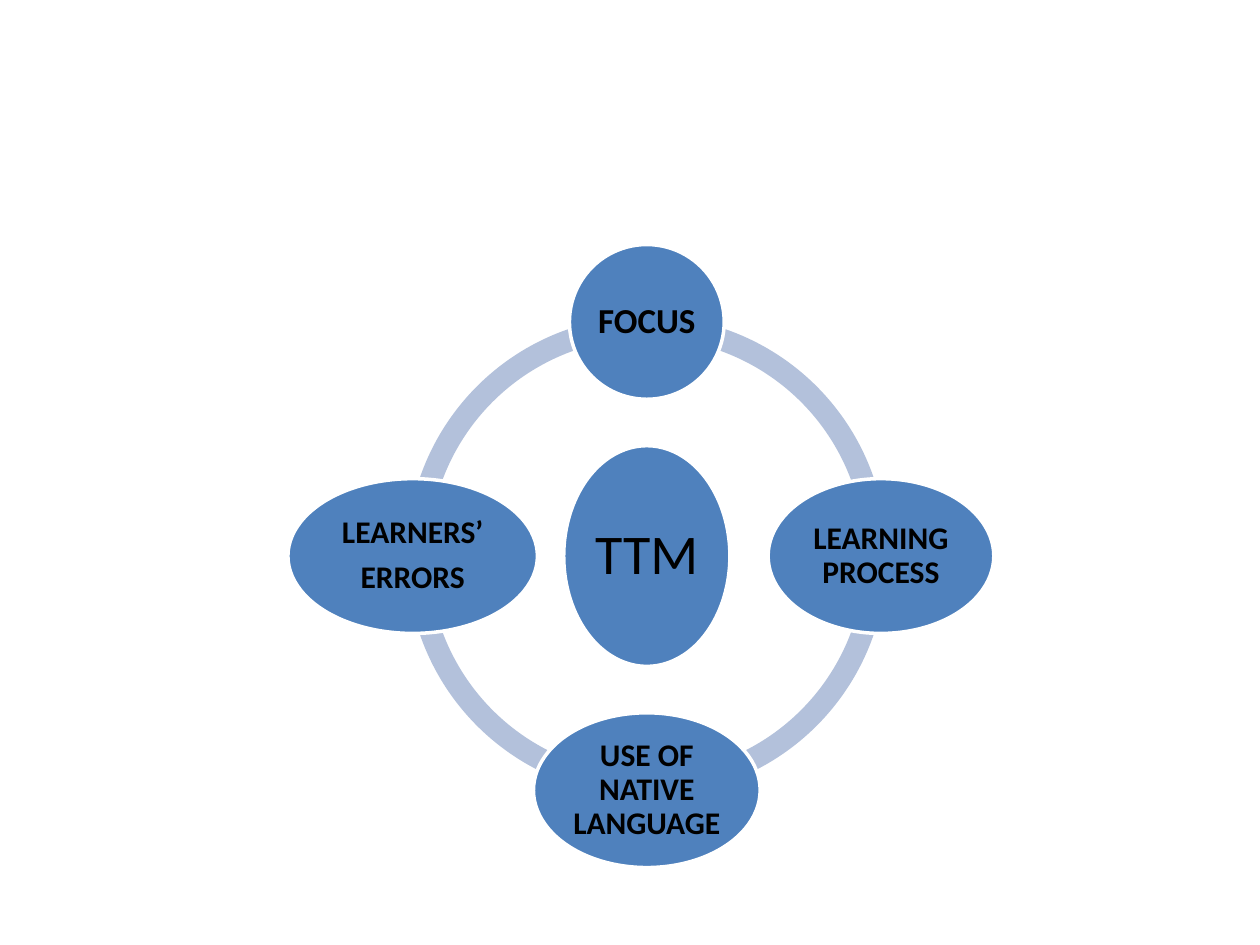
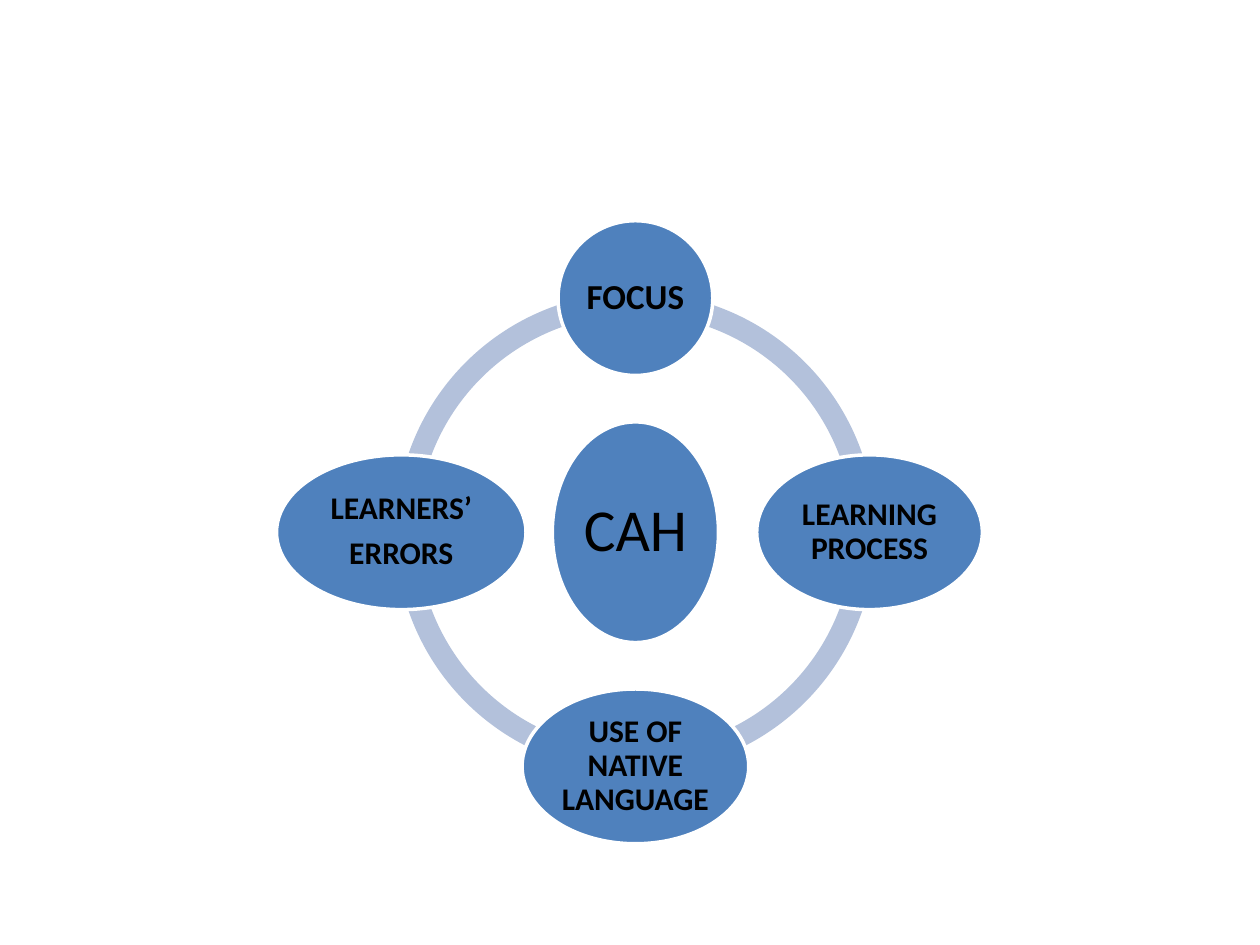
from dataclasses import dataclass
from math import cos, radians, sin

from pptx import Presentation
from pptx.dml.color import RGBColor as Rgb
from pptx.enum.shapes import MSO_SHAPE as Geo
from pptx.enum.text import MSO_ANCHOR as Anchor, PP_ALIGN as Align
from pptx.util import Cm, Pt


@dataclass(frozen=True)
class Theme:
    font: str = "Calibri"
    node: Rgb = Rgb(0x4F, 0x81, 0xBD)
    ring: Rgb = Rgb(0xB3, 0xC1, 0xDB)
    edge: Rgb = Rgb(0xFF, 0xFF, 0xFF)
    ink: Rgb = Rgb(0, 0, 0)
    edge_pt: float = 2
    head_pt: int = 20
    node_pt: int = 18
    line: float = 0.9
    gap: float = 0.35
    inset: float = 0.08


THEME = Theme()

# Lengths in centimetres
RING = 9.68
ORBIT = 4.72
BAND = 0.046
HUB = (3.35, 4.45)
HIGH = 3.12
TURN = 0.6  # a blockArc angle adjustment counts 0.6 per degree

# Clockwise from the top: lines, width, type size
NODES = (
    (["FOCUS"], HIGH, THEME.head_pt),
    (["LEARNING PROCESS"], 4.55, THEME.node_pt),
    (["USE OF NATIVE LANGUAGE"], 4.57, THEME.node_pt),
    (["LEARNERS’", "ERRORS"], 5.03, THEME.node_pt),
)

# Hub text, its type size, centre of the ring
CYCLES = (
    ("TTM", 32, (13.04, 11.21)),
    ("CAH", 34, (12.81, 10.73)),
)


def assign(target, values):
    for name, value in values.items():
        setattr(target, name, value)


class Deck:
    def __init__(self, theme):
        self.theme = theme
        self.prs = Presentation()
        assign(self.prs, {"slide_width": Cm(25.4), "slide_height": Cm(19.05)})
        self.slide = None

    def page(self):
        self.slide = self.prs.slides.add_slide(self.prs.slide_layouts[6])

    def shape(self, geo, mid, size, fill):
        """Add a filled shape centred on mid."""
        (x, y), (wide, high) = mid, size
        shape = self.slide.shapes.add_shape(
            geo, Cm(x - wide / 2), Cm(y - high / 2), Cm(wide), Cm(high))
        shape.shadow.inherit = False
        shape.fill.solid()
        shape.fill.fore_color.rgb = fill
        return shape

    def arc(self, mid, start):
        """Add the quarter of the ring that begins at start degrees."""
        arc = self.shape(Geo.BLOCK_ARC, mid, (RING, RING), self.theme.ring)
        arc.line.fill.background()
        values = (start * TURN, (start + 90) % 360 * TURN, BAND)
        for i, value in enumerate(values):
            arc.adjustments[i] = value

    def oval(self, mid, size, lines, points, bold=True):
        look = self.theme
        oval = self.shape(Geo.OVAL, mid, size, look.node)
        oval.line.color.rgb = look.edge
        oval.line.width = Pt(look.edge_pt)
        frame = oval.text_frame
        assign(frame, {"word_wrap": True, "vertical_anchor": Anchor.MIDDLE})
        sides = ("left", "top", "right", "bottom")
        assign(frame, {f"margin_{side}": Cm(look.inset) for side in sides})
        for i, text in enumerate(lines):
            para = frame.add_paragraph() if i else frame.paragraphs[0]
            para.text = text
            assign(para, {"alignment": Align.CENTER, "line_spacing": look.line,
                          "space_after": Pt(points * look.gap)})
            assign(para.font, {"name": look.font, "size": Pt(points),
                               "bold": bold})
            para.font.color.rgb = look.ink

    def cycle(self, hub, points, mid):
        """Draw the ring, its hub and the nodes around it."""
        for start in (180, 90, 0, 270):
            self.arc(mid, start)
        self.oval(mid, HUB, [hub], points, bold=False)
        for i, (lines, wide, size) in enumerate(NODES):
            turn = radians(i * 90 - 90)
            spot = (mid[0] + ORBIT * cos(turn), mid[1] + ORBIT * sin(turn))
            self.oval(spot, (wide, HIGH), lines, size)


def main():
    deck = Deck(THEME)
    for hub, points, mid in CYCLES:
        deck.page()
        deck.cycle(hub, points, mid)
    deck.prs.save("out.pptx")


if __name__ == "__main__":
    main()
